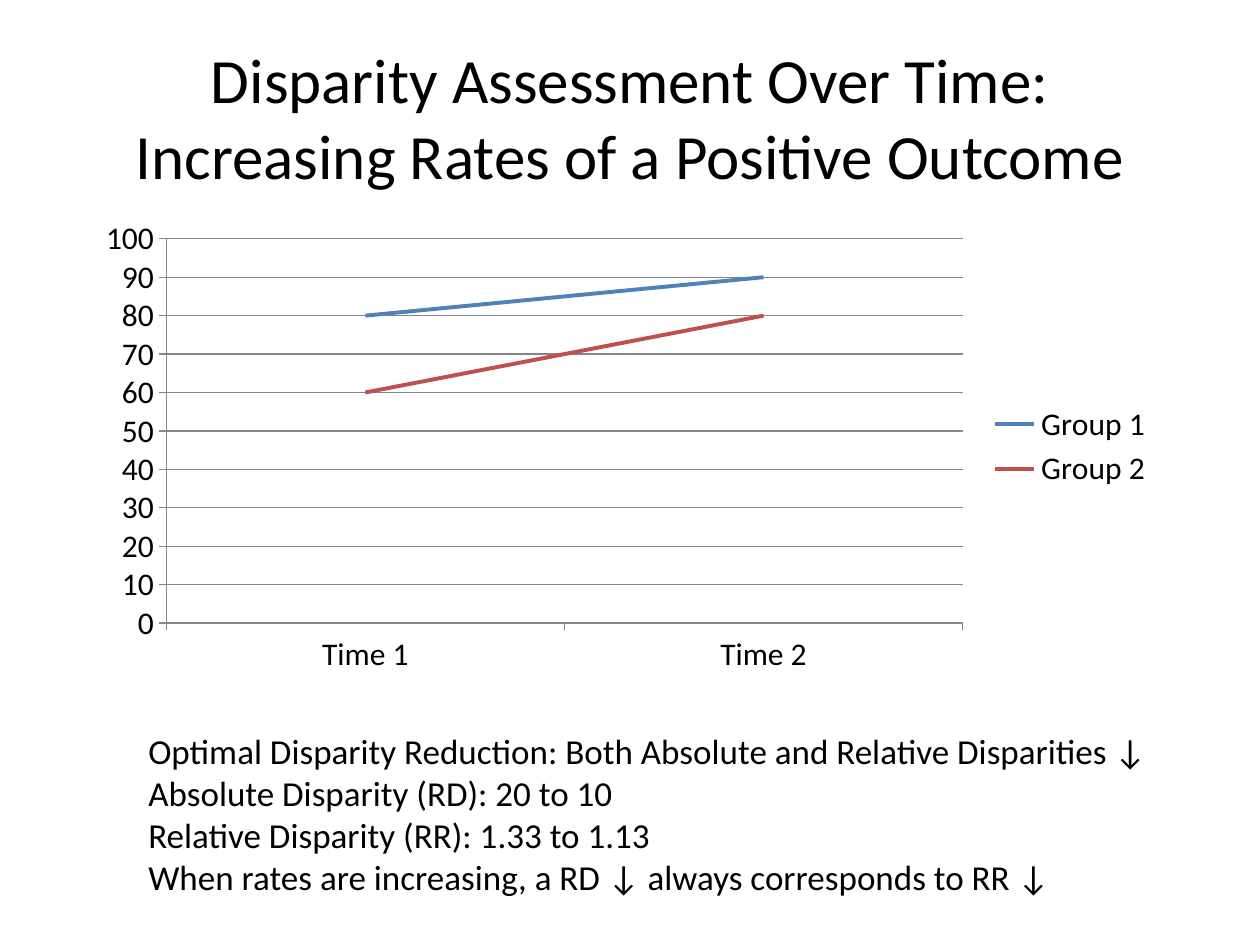
from pptx import Presentation
from pptx.chart.data import CategoryChartData
from pptx.dml.color import RGBColor
from pptx.enum.chart import XL_CHART_TYPE, XL_LEGEND_POSITION, XL_MARKER_STYLE, XL_TICK_MARK
from pptx.enum.text import MSO_ANCHOR, PP_ALIGN
from pptx.util import Cm, Pt

LINE = XL_CHART_TYPE.LINE
RIGHT = XL_LEGEND_POSITION.RIGHT
NO_MARKER = XL_MARKER_STYLE.NONE
OUTSIDE, NO_TICK = XL_TICK_MARK.OUTSIDE, XL_TICK_MARK.NONE
TOP, MIDDLE = MSO_ANCHOR.TOP, MSO_ANCHOR.MIDDLE
LEFT, CENTER = PP_ALIGN.LEFT, PP_ALIGN.CENTER
FONT, BLACK, GRAY = "Calibri", "000000", "868686"


def color(value):
    return RGBColor.from_string(value)


def add_text(lines, left, top, width, height, size=20, align=LEFT, anchor=TOP):
    box = page.shapes.add_textbox(Cm(left), Cm(top), Cm(width), Cm(height))
    frame = box.text_frame
    frame.word_wrap = True
    frame.vertical_anchor = anchor
    for index, line in enumerate(lines):
        para = frame.paragraphs[0] if index == 0 else frame.add_paragraph()
        para.text = line
        para.alignment = align
        for span in para.runs:
            span.font.name = FONT
            span.font.size = Pt(size)
            span.font.color.rgb = color(BLACK)


deck = Presentation()
deck.slide_width, deck.slide_height = Cm(25.4), Cm(19.05)
page = deck.slides.add_slide(deck.slide_layouts[6])

# Title, with a line break inside one paragraph
add_text(["Disparity Assessment Over Time:\vIncreasing Rates of a Positive Outcome"],
         1.27, 0.76, 22.86, 3.18, size=36, align=CENTER, anchor=MIDDLE)

# Line chart of the two groups
groups = [("Group 1", (80, 90), "4F81BD"), ("Group 2", (60, 80), "C0504D")]
data = CategoryChartData()
data.categories = ["Time 1", "Time 2"]
for name, values, _ in groups:
    data.add_series(name, values)
chart = page.shapes.add_chart(LINE, Cm(1.7), Cm(4.24), Cm(21.8), Cm(9.53), data).chart
chart.has_title = False
chart.font.name = FONT
chart.font.size = Pt(18)
chart.font.color.rgb = color(BLACK)
chart.has_legend = True
chart.legend.position = RIGHT
chart.legend.include_in_layout = False
chart.plots[0].vary_by_categories = False

for series, (_, _, shade) in zip(chart.plots[0].series, groups):
    series.smooth = False
    series.marker.style = NO_MARKER
    series.format.line.color.rgb = color(shade)
    series.format.line.width = Pt(2.25)

# Axes and gridlines
scale = chart.value_axis
scale.minimum_scale, scale.maximum_scale, scale.major_unit = 0, 100, 10
scale.has_major_gridlines = True
for axis in (chart.category_axis, scale):
    axis.major_tick_mark = OUTSIDE
    axis.minor_tick_mark = NO_TICK
for part in (chart.category_axis, scale, scale.major_gridlines):
    part.format.line.color.rgb = color(GRAY)
    part.format.line.width = Pt(0.75)

# Findings
add_text(["Optimal Disparity Reduction: Both Absolute and Relative Disparities ↓",
          "Absolute Disparity (RD): 20 to 10",
          "Relative Disparity (RR): 1.33 to 1.13",
          "When rates are increasing, a RD ↓ always corresponds to RR ↓"],
         2.74, 14.58, 21.59, 3.68)

deck.save("out.pptx")
